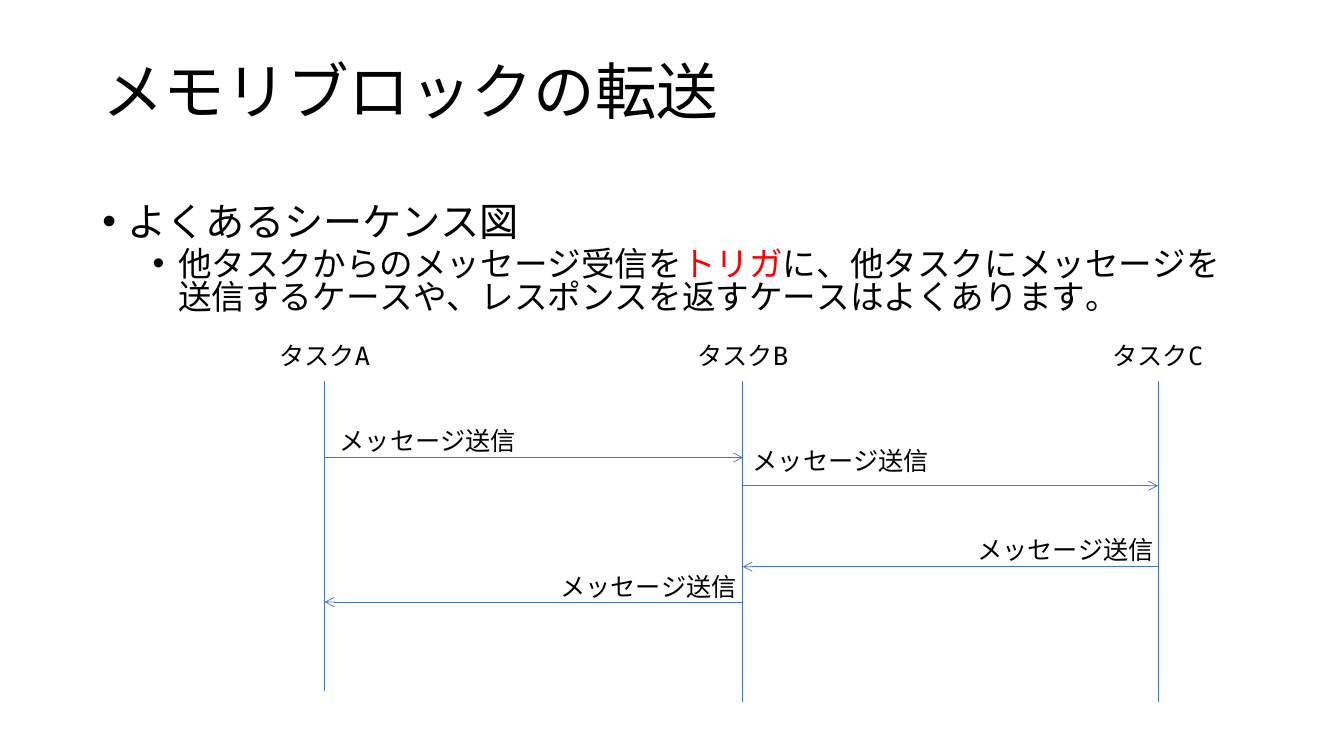
from lxml.etree import SubElement
from pptx import Presentation
from pptx.dml.color import RGBColor
from pptx.enum.shapes import MSO_CONNECTOR as Connector
from pptx.enum.text import MSO_ANCHOR as Anchor, PP_ALIGN as Align
from pptx.oxml.ns import qn
from pptx.util import Cm, Pt

FONT = "DejaVu Sans Mono"
COLORS = {"text": "000000", "trigger": "FF0000", "line": "4472C4"}
TITLE = "メモリブロックの転送"
HEADING = "よくあるシーケンス図"
DETAIL = [
    ("他タスクからのメッセージ受信を", "text"),
    ("トリガ", "trigger"),
    ("に、他タスクにメッセージを送信するケースや、レスポンスを返すケースはよくあります。", "text"),
]
MESSAGE = "メッセージ送信"
TASKS = {
    "タスクA": {"x": 8.18, "bottom": 17.42},
    "タスクB": {"x": 18.72, "bottom": 17.68},
    "タスクC": {"x": 29.18, "bottom": 17.68},
}
MESSAGES = [
    {"from": "タスクA", "to": "タスクB", "y": 11.53, "label": (8.31, 10.6)},
    {"from": "タスクB", "to": "タスクC", "y": 12.24, "label": (18.72, 11.1)},
    {"from": "タスクC", "to": "タスクB", "y": 14.28, "label": (24.38, 13.33)},
    {"from": "タスクB", "to": "タスクA", "y": 15.17, "label": (13.87, 14.28)},
]
LIFELINE_TOP = 9.6
TASK_TOP, TASK_WIDTH = 8.46, 6.12
MESSAGE_WIDTH, LABEL_HEIGHT = 9.47, 1.02


def add_frame(slide, left, top, width, height):
    """Add a wrapping text box and return its text frame."""
    frame = slide.shapes.add_textbox(Cm(left), Cm(top), Cm(width), Cm(height)).text_frame
    frame.word_wrap = True
    return frame


def write(paragraph, runs, size):
    """Fill a paragraph with (text, colour name) runs in one font and size."""
    paragraph.font.name = FONT
    paragraph.font.size = Pt(size)
    for text, color in runs:
        run = paragraph.add_run()
        run.text = text
        run.font.color.rgb = RGBColor.from_string(COLORS[color])
        run.font.name = FONT
        run.font.size = Pt(size)
        SubElement(run.font._element, qn("a:ea"), typeface=FONT)


def add_bullet(paragraph, indent, space_before):
    """Give a paragraph a round bullet with a hanging indent."""
    paragraph.line_spacing = 0.8
    paragraph.space_before = Pt(space_before)
    properties = paragraph._p.get_or_add_pPr()
    properties.set("marL", str(Cm(indent)))
    properties.set("indent", str(-Cm(0.64)))
    bullet_font = properties.makeelement(qn("a:buFont"), {"typeface": "Arial"})
    bullet = properties.makeelement(qn("a:buChar"), {"char": "•"})
    default_font = properties.find(qn("a:defRPr"))
    default_font.addprevious(bullet_font)
    default_font.addprevious(bullet)


def add_line(slide, start, end, arrow=False):
    """Draw a thin straight line, with an open arrowhead if asked."""
    line = slide.shapes.add_connector(Connector.STRAIGHT, *map(Cm, start + end))
    line.line.color.rgb = RGBColor.from_string(COLORS["line"])
    line.line.width = Pt(0.5)
    if arrow:
        SubElement(line.line._get_or_add_ln(), qn("a:tailEnd"), type="arrow")
    SubElement(line._element.spPr, qn("a:effectLst"))


def main():
    """Build the sequence diagram slide."""
    presentation = Presentation()
    presentation.slide_width, presentation.slide_height = Cm(33.87), Cm(19.05)
    slide = presentation.slides.add_slide(presentation.slide_layouts[6])

    title = add_frame(slide, 2.33, 1.01, 29.21, 2.77)
    title.vertical_anchor = Anchor.MIDDLE
    title.paragraphs[0].line_spacing = 0.9
    write(title.paragraphs[0], [(TITLE, "text")], 44)

    body = add_frame(slide, 2.33, 5.08, 29.21, 3.23)
    heading, detail = body.paragraphs[0], body.add_paragraph()
    write(heading, [(HEADING, "text")], 28)
    add_bullet(heading, 0.64, 10)
    detail.level = 1
    write(detail, DETAIL, 24)
    add_bullet(detail, 1.91, 5)

    for name, task in TASKS.items():
        label = add_frame(slide, task["x"] - TASK_WIDTH / 2, TASK_TOP, TASK_WIDTH, LABEL_HEIGHT)
        label.paragraphs[0].alignment = Align.CENTER
        write(label.paragraphs[0], [(name, "text")], 18)
        add_line(slide, (task["x"], LIFELINE_TOP), (task["x"], task["bottom"]))

    for message in MESSAGES:
        start, end = (TASKS[message[side]]["x"] for side in ("from", "to"))
        add_line(slide, (start, message["y"]), (end, message["y"]), arrow=True)
        label = add_frame(slide, *message["label"], MESSAGE_WIDTH, LABEL_HEIGHT)
        write(label.paragraphs[0], [(MESSAGE, "text")], 18)

    presentation.save("out.pptx")


if __name__ == "__main__":
    main()
